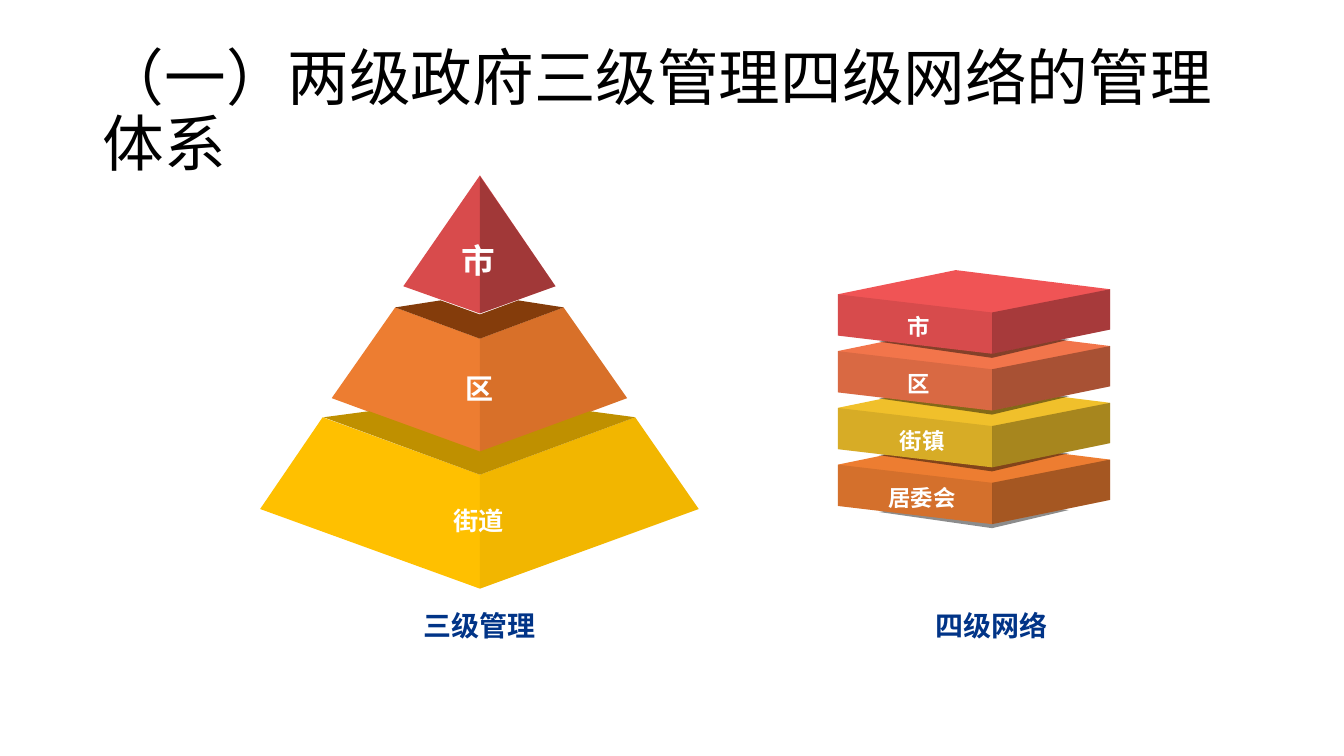
from lxml.etree import SubElement
from pptx import Presentation
from pptx.dml.color import RGBColor
from pptx.enum.text import MSO_ANCHOR, MSO_AUTO_SIZE, PP_ALIGN
from pptx.oxml.ns import qn
from pptx.util import Inches, Pt

FONT = "Noto Sans CJK SC"
BLACK = RGBColor(0x00, 0x00, 0x00)
WHITE = RGBColor(0xFF, 0xFF, 0xFF)
NAVY = RGBColor(0x01, 0x34, 0x87)
CORAL = RGBColor(0xF0, 0x54, 0x55)
SALMON = RGBColor(0xF2, 0x75, 0x4B)
GOLD = RGBColor(0xF0, 0xC0, 0x2B)
ORANGE = RGBColor(0xED, 0x7D, 0x31)
RED = RGBColor(0xD8, 0x4B, 0x4C)
BROWN = RGBColor(0x84, 0x3C, 0x0B)
YELLOW = RGBColor(0xFF, 0xC0, 0x00)
DARK_YELLOW = RGBColor(0xBF, 0x90, 0x00)
OLIVE = RGBColor(0x80, 0x60, 0x00)


def write_text(shape, text, size, color, bold=False, align=PP_ALIGN.CENTER,
               anchor=MSO_ANCHOR.TOP, auto_size=MSO_AUTO_SIZE.SHAPE_TO_FIT_TEXT,
               line_spacing=1.0):
    frame = shape.text_frame
    frame.word_wrap = True
    frame.auto_size = auto_size
    frame.vertical_anchor = anchor
    paragraph = frame.paragraphs[0]
    paragraph.alignment = align
    paragraph.line_spacing = line_spacing
    run = paragraph.add_run()
    run.text = text
    run.font.size = Pt(size)
    run.font.bold = bold
    run.font.color.rgb = color
    run.font.name = FONT
    SubElement(run._r.get_or_add_rPr(), qn("a:ea"), typeface=FONT)


def add_face(group, points, color, opacity=100):
    """Draw a closed polygon from points in inches; opacity is a percentage."""
    corners = [(Inches(x), Inches(y)) for x, y in points]
    builder = group.shapes.build_freeform(*corners[0])
    builder.add_line_segments(corners[1:], close=True)
    face = builder.convert_to_shape()
    face.shadow.inherit = False
    face.line.fill.background()
    face.fill.solid()
    face.fill.fore_color.rgb = color
    if opacity < 100:
        fill_color = face.element.spPr.find(".//" + qn("a:srgbClr"))
        SubElement(fill_color, qn("a:alpha"), val=str(opacity * 1000))


presentation = Presentation()
presentation.slide_width = Inches(13.33)
presentation.slide_height = Inches(7.5)
slide = presentation.slides.add_slide(presentation.slide_layouts[5])

title = slide.shapes.title
title.left, title.top = Inches(0.92), Inches(0.4)
title.width, title.height = Inches(11.5), Inches(1.45)
write_text(title, "（一）两级政府三级管理四级网络的管理体系", 44, BLACK,
           align=PP_ALIGN.LEFT, anchor=MSO_ANCHOR.MIDDLE,
           auto_size=MSO_AUTO_SIZE.NONE, line_spacing=0.9)

# Four-level network: equal slabs, stacked from the bottom up.
# Heights are measured from the top corner of each slab.
SLAB_TOP = 2.68
SLAB_STEP = (4.37 - SLAB_TOP) / 3
SLAB_FACES = [
    # points, colour (None for the slab's own), opacity
    ([(10.6, 0.69), (9.48, 0.56), (8.72, 0.71), (9.84, 0.87)], BLACK, 45),
    ([(9.48, 0), (8.31, 0.24), (8.31, 0.65), (9.84, 0.83), (11.01, 0.59),
      (11.01, 0.19)], None, 100),
    ([(11.01, 0.19), (11.01, 0.59), (9.84, 0.83), (9.84, 0.42)], BLACK, 30),
    ([(9.84, 0.42), (9.84, 0.83), (8.31, 0.65), (8.31, 0.24)], BLACK, 10),
]
slabs = [("市", CORAL, 8.52), ("区", SALMON, 8.52),
         ("街镇", GOLD, 8.55), ("居委会", ORANGE, 8.55)]

# Labels: text, left, top, width, height, size, colour
labels = []
network = slide.shapes.add_group_shape()
for level, (name, slab_color, label_left) in reversed(list(enumerate(slabs))):
    top = SLAB_TOP + level * SLAB_STEP
    for points, color, opacity in SLAB_FACES:
        add_face(network, [(x, top + y) for x, y in points],
                 color or slab_color, opacity)
    labels.append((name, label_left, top + 0.38, 1.19, 0.37, 16, WHITE))

# Three-level management: pyramid tiers from the apex down.
CENTER = 4.76
tiers = [
    [([(5.51, 2.84), (CENTER, 1.74), (4, 2.84), (CENTER, 3.11)], RED, 100),
     ([(CENTER, 3.11), (5.51, 2.84), (CENTER, 1.75)], BLACK, 25)],
    [([(CENTER, 3.36), (3.92, 3.05), (3.29, 3.95), (CENTER, 4.49),
       (6.22, 3.95), (5.59, 3.05)], ORANGE, 100),
     ([(5.59, 3.05), (5.14, 2.98), (CENTER, 3.12), (4.37, 2.98),
       (3.92, 3.05), (CENTER, 3.36)], BROWN, 100),
     ([(CENTER, 4.49), (6.22, 3.95), (5.59, 3.05), (CENTER, 3.36)], BROWN, 20)],
    [([(3.2, 4.14), (2.58, 5.05), (CENTER, 5.84), (6.93, 5.05),
       (6.3, 4.14), (CENTER, 4.71)], YELLOW, 100),
     ([(6.3, 4.14), (5.85, 4.08), (CENTER, 4.48), (3.66, 4.08),
       (3.21, 4.14), (CENTER, 4.71)], DARK_YELLOW, 100),
     ([(CENTER, 5.84), (6.93, 5.05), (6.3, 4.14), (CENTER, 4.71)], OLIVE, 10)],
]
for tier_faces in tiers:
    tier = slide.shapes.add_group_shape()
    for points, color, opacity in tier_faces:
        add_face(tier, points, color, opacity)

labels += [
    ("市", 4.15, 2.33, 1.19, 0.5, 24, WHITE),
    ("区", 4.16, 3.64, 1.19, 0.44, 20, WHITE),
    ("街道", 4.15, 4.96, 1.19, 0.4, 18, WHITE),
    ("三级管理", 4, 5.99, 1.51, 0.44, 20, NAVY),
    ("四级网络", 9.08, 5.99, 1.51, 0.44, 20, NAVY),
]
for text, left, top, width, height, size, color in labels:
    label = slide.shapes.add_textbox(Inches(left), Inches(top),
                                     Inches(width), Inches(height))
    write_text(label, text, size, color, bold=True)

presentation.save("out.pptx")
